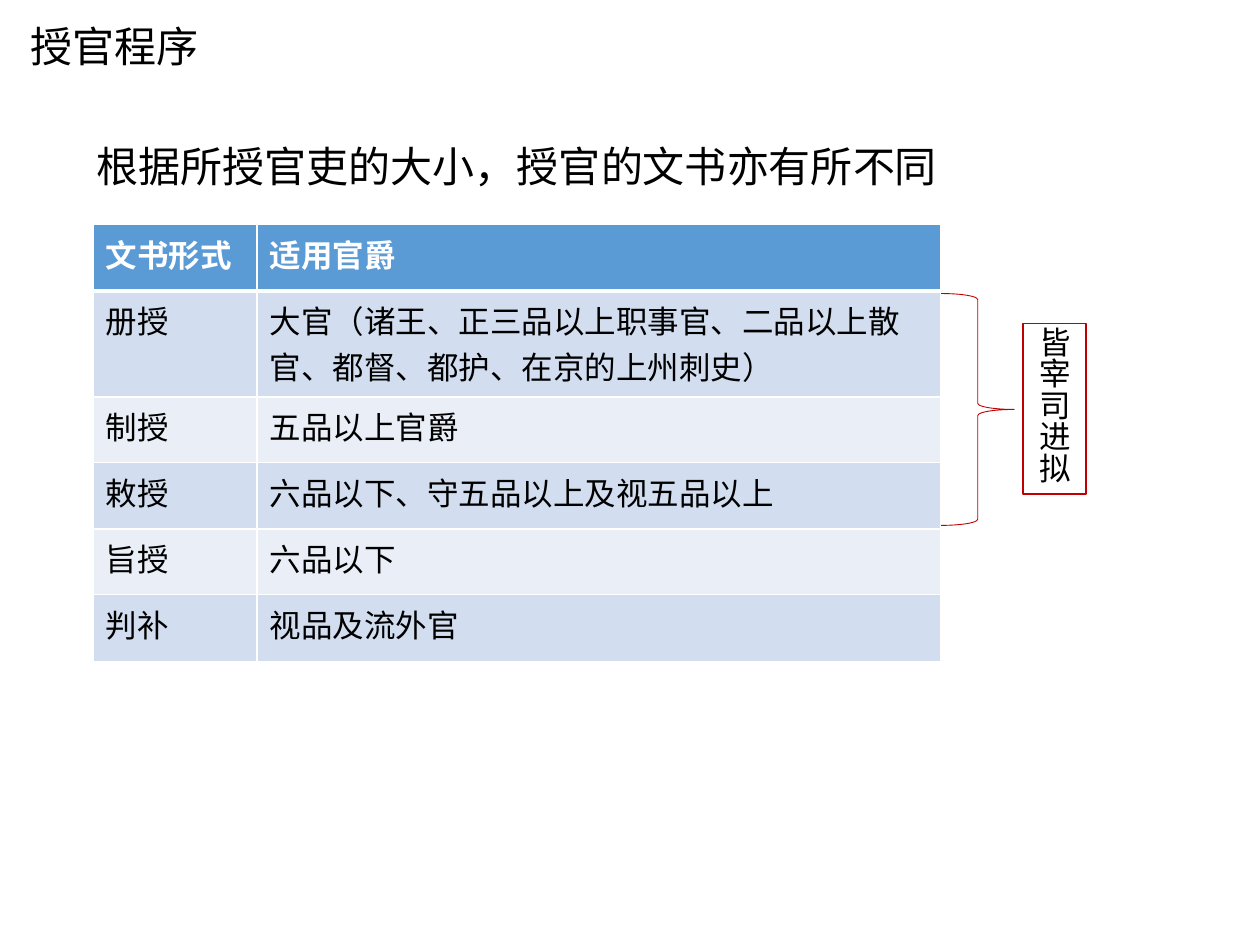
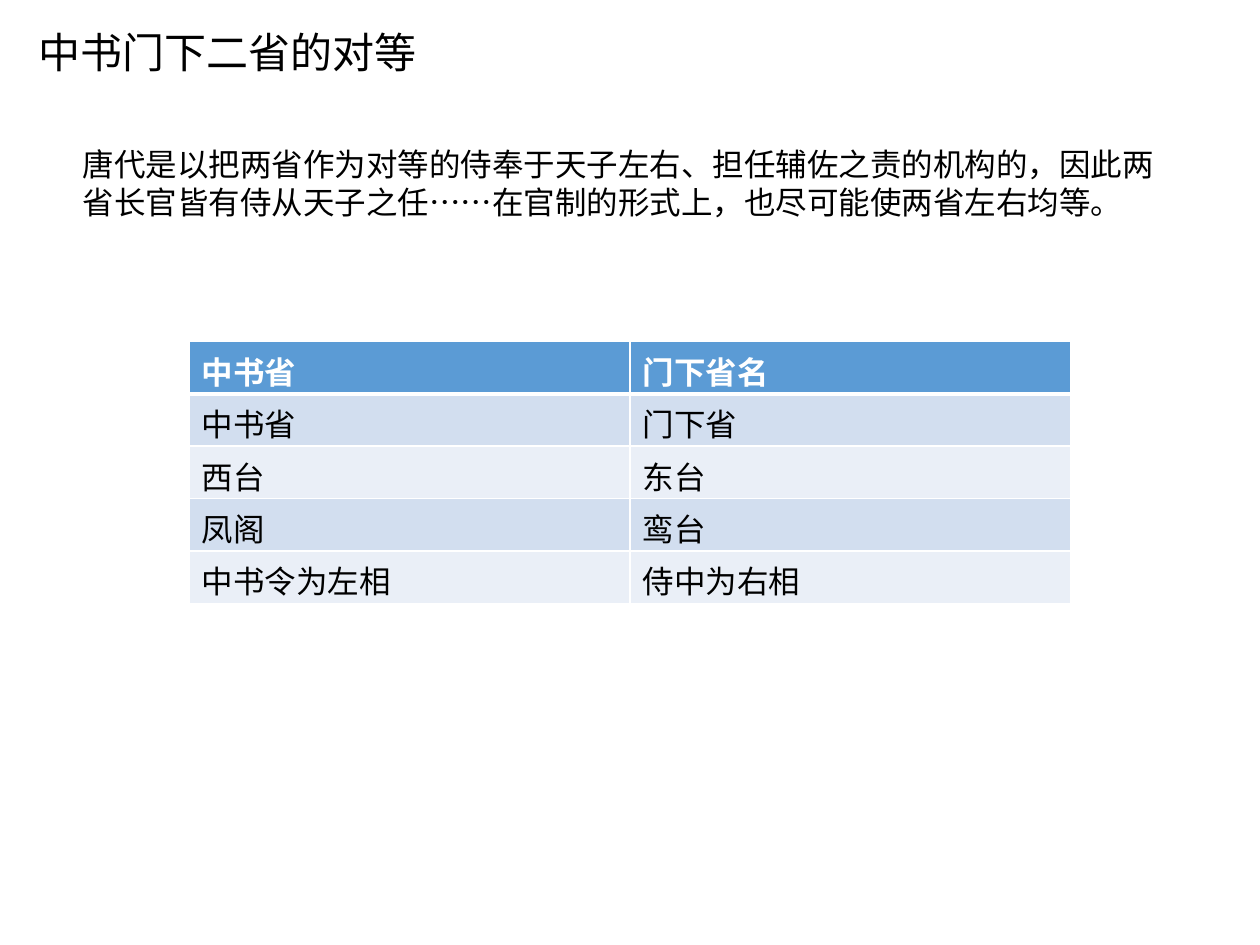
"""Build two slides on Tang appointment documents and the paired secretariats."""
import pptx
import pptx.dml.color
import pptx.enum.shapes
import pptx.enum.text
import pptx.oxml
import pptx.oxml.ns
import pptx.util
from pptx.util import Inches

COLORS = {
    "text": "000000",
    "white": "FFFFFF",
    "header": "5B9BD5",
    "odd_row": "D2DEEF",
    "even_row": "EAEFF7",
    "accent": "C00000",
}
CJK_FONT = "Noto Sans CJK SC"
LATIN_FONT = "Arial"
TITLE_SIZE, BODY_SIZE = 24, 18


def rgb(name):
    return pptx.dml.color.RGBColor.from_string(COLORS[name])


def write_text(text_frame, text, size, font=LATIN_FONT, color="text", bold=False):
    text_frame.text = text
    text_frame.word_wrap = True
    paragraph = text_frame.paragraphs[0]
    paragraph.alignment = pptx.enum.text.PP_ALIGN.LEFT
    run = paragraph.runs[0]
    run.font.size = pptx.util.Pt(size)
    run.font.bold = bold
    run.font.name = font
    run.font.color.rgb = rgb(color)
    east_asian = pptx.oxml.parse_xml(
        f'<a:ea {pptx.oxml.ns.nsdecls("a")} typeface="{CJK_FONT}"/>')
    run.font._element.find(pptx.oxml.ns.qn("a:latin")).addnext(east_asian)


presentation = pptx.Presentation()
presentation.slide_width = Inches(10)
presentation.slide_height = Inches(7.5)

pages = [
    {
        "title": ("授官程序", 0.14, 0.11, 2.45, 0.81),
        "intro": ("根据所授官吏的大小，授官的文书亦有所不同", 0.37, 1.07, 9.06, 0.5),
        "intro_style": {"size": TITLE_SIZE, "font": CJK_FONT},
        "intro_margin": 0.4,
        "table_at": (0.74, 1.78),
        "columns": [1.3, 5.43],
        "heights": [0.53, 0.84, 0.52, 0.53, 0.52, 0.53],
        "rows": [
            ("文书形式", "适用官爵"),
            ("册授", "大官（诸王、正三品以上职事官、二品以上散官、都督、都护、在京的上州刺史）"),
            ("制授", "五品以上官爵"),
            ("敕授", "六品以下、守五品以上及视五品以上"),
            ("旨授", "六品以下"),
            ("判补", "视品及流外官"),
        ],
    },
    {
        "title": ("中书门下二省的对等", 0.21, 0.16, 3.2, 0.5),
        "intro": ("唐代是以把两省作为对等的侍奉于天子左右、担任辅佐之责的机构的，因此两省长官皆有侍从天子之任"
                  "……在官制的形式上，也尽可能使两省左右均等。", 0.56, 1.1, 8.75, 0.71),
        "intro_style": {"size": BODY_SIZE},
        "intro_margin": 0.1,
        "table_at": (1.5, 2.71),
        "columns": [3.5, 3.5],
        "heights": [2.08 / 5] * 5,
        "rows": [
            ("中书省", "门下省名"),
            ("中书省", "门下省"),
            ("西台", "东台"),
            ("凤阁", "鸾台"),
            ("中书令为左相", "侍中为右相"),
        ],
    },
]

for page in pages:
    slide = presentation.slides.add_slide(presentation.slide_layouts[6])

    title, *place = page["title"]
    title_box = slide.shapes.add_textbox(*map(Inches, place))
    write_text(title_box.text_frame, title, TITLE_SIZE, CJK_FONT)

    intro, *place = page["intro"]
    intro_box = slide.shapes.add_textbox(*map(Inches, place))
    intro_box.text_frame.margin_left = Inches(page["intro_margin"])
    write_text(intro_box.text_frame, intro, **page["intro_style"])

    rows, columns, heights = page["rows"], page["columns"], page["heights"]
    place = (*page["table_at"], sum(columns), sum(heights))
    table = slide.shapes.add_table(len(rows), len(columns), *map(Inches, place)).table
    for column, width in zip(table.columns, columns):
        column.width = Inches(width)
    for row_index, (row, height) in enumerate(zip(rows, heights)):
        table.rows[row_index].height = Inches(height)
        is_header = row_index == 0
        fill = "header" if is_header else "odd_row" if row_index % 2 else "even_row"
        for column_index, text in enumerate(row):
            cell = table.cell(row_index, column_index)
            cell.margin_bottom = 0
            cell.fill.solid()
            cell.fill.fore_color.rgb = rgb(fill)
            write_text(cell.text_frame, text, BODY_SIZE,
                       color="white" if is_header else "text", bold=is_header)
            widths = {"lnL": 1, "lnR": 1, "lnT": 3 if row_index == 1 else 1,
                      "lnB": 3 if is_header else 1}
            for position, (side, points) in enumerate(widths.items()):
                border = pptx.oxml.parse_xml(
                    f'<a:{side} {pptx.oxml.ns.nsdecls("a")} w="{pptx.util.Pt(points)}">'
                    f'<a:solidFill><a:srgbClr val="{COLORS["white"]}"/></a:solidFill></a:{side}>')
                cell._tc.get_or_add_tcPr().insert(position, border)

slide = presentation.slides[0]
shape_types = pptx.enum.shapes.MSO_SHAPE
brace = slide.shapes.add_shape(
    shape_types.RIGHT_BRACE, Inches(7.47), Inches(2.33), Inches(0.58), Inches(1.84))
note = slide.shapes.add_shape(
    shape_types.RECTANGLE, Inches(8.12), Inches(2.57), Inches(0.5), Inches(1.35))
for shape, line_width in ((brace, 0.5), (note, 0.75)):
    shape.shadow.inherit = False
    shape.fill.background()
    shape.line.color.rgb = rgb("accent")
    shape.line.width = pptx.util.Pt(line_width)
note_frame = note.text_frame
write_text(note_frame, "皆宰司进拟", BODY_SIZE)
note_frame.paragraphs[0].alignment = pptx.enum.text.PP_ALIGN.CENTER
note_frame.vertical_anchor = pptx.enum.text.MSO_ANCHOR.MIDDLE
note_frame.margin_left = note_frame.margin_right = Inches(0.02)
note_frame.margin_top = note_frame.margin_bottom = Inches(0.02)
note_frame._txBody.bodyPr.set("vert", "eaVert")

presentation.save("out.pptx")
